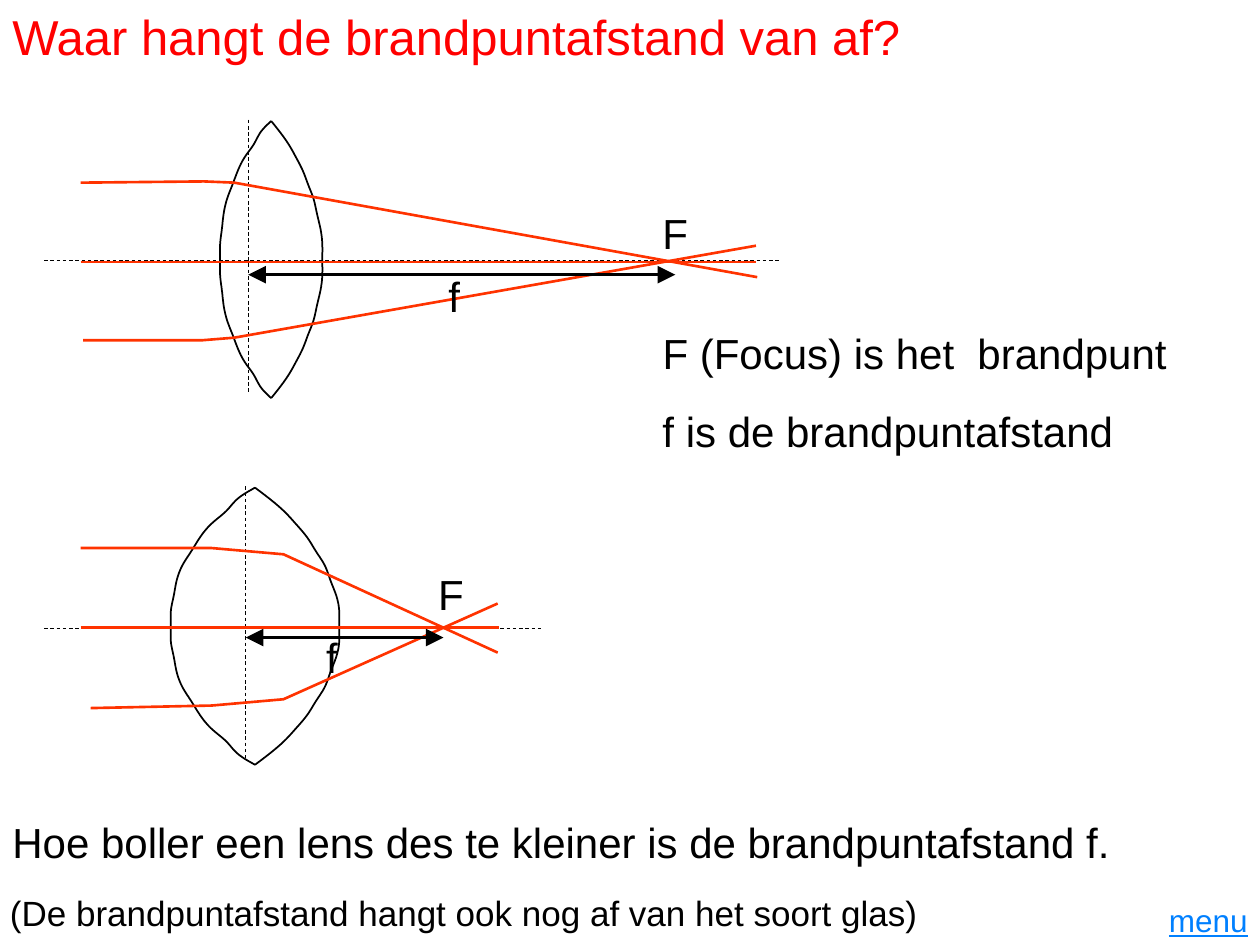
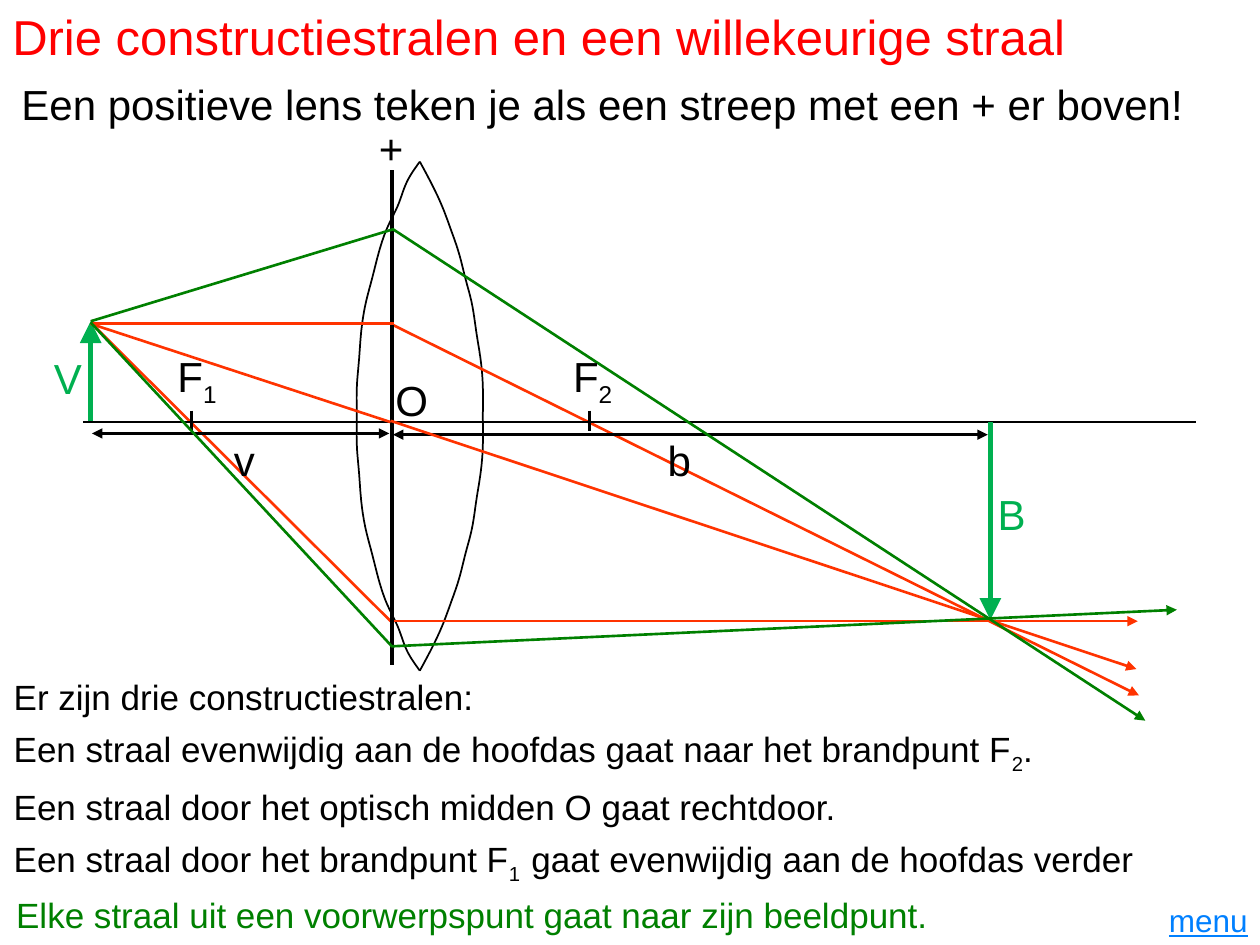
from dataclasses import dataclass

import lxml.etree
import pptx
import pptx.chart.data
import pptx.dml.color
import pptx.enum.chart
import pptx.enum.dml
import pptx.enum.shapes
import pptx.enum.text
import pptx.oxml.ns
import pptx.util

Inches = pptx.util.Inches
Pt = pptx.util.Pt
qn = pptx.oxml.ns.qn


@dataclass(frozen=True)
class Theme:
    font: str = "Arial"
    chart_font: str = "Times New Roman"
    black: str = "000000"
    title: str = "FF0000"
    ray: str = "FF3300"
    free_ray: str = "008000"
    arrow: str = "00B050"
    link: str = "0080FF"
    title_size: int = 28
    large: int = 24
    body: int = 20
    menu: int = 18
    chart_size: int = 10


THEME = Theme()

LENS_HEIGHTS = [100, 92, 83, 74, 64, 54, 44, 33, 22, 11, 0]
LENS_RIGHT = [0.71, 0.76, 0.81, 0.85, 0.89, 0.92, 0.95, 0.97, 0.99, 1, 1]
LENS_LEFT = [0.71, 0.65, 0.61, 0.56, 0.52, 0.49, 0.46, 0.44, 0.43, 0.42, 0.42]
LENS_PLOT = {"x": 0.082, "y": 0.199, "w": 0.842, "h": 0.644}
LENS_X_RANGE = (0.3, 1.1)
LENS_Y_RANGE = (-113, 113)

RAY = {"color": THEME.ray, "width": 1.5}
RAY_OUT = {**RAY, "tail": True}
FREE_RAY = {"color": THEME.free_ray, "width": 1.5, "tail": True}
GUIDE = {"color": THEME.black, "width": 0.5, "dash": True}
AXIS = {"color": THEME.black, "width": 1.5}
TICK = {"color": THEME.black, "width": 2}
LENS_LINE = {"color": THEME.black, "width": 2.5}
FOCAL_SPAN = {**TICK, "head": True, "tail": True}
DISTANCE = {**AXIS, "head": True, "tail": True}
OBJECT = {"color": THEME.arrow, "width": 2.5, "tail": True}

LARGE = {"size": THEME.large}
MIDDLE = {"size": THEME.large, "anchor": "MIDDLE"}
CENTERED = {**MIDDLE, "align": "CENTER"}
BODY = {"size": THEME.body, "anchor": "MIDDLE"}
GREEN = {"size": THEME.large, "color": THEME.arrow}
FREE_NOTE = {**BODY, "color": THEME.free_ray}
TITLE = {"size": THEME.title_size, "color": THEME.title, "anchor": "MIDDLE"}
MENU = {"size": THEME.menu, "color": THEME.link, "align": "RIGHT", "underline": True}
MENU_TEXT = ((8.98, 7.1, 1.02, 0.4), "menu", MENU)

RULES = [
    "Er zijn drie constructiestralen:",
    ["Een straal evenwijdig aan de hoofdas gaat naar het brandpunt F", ("2",), "."],
    "Een straal door het optisch midden O gaat rechtdoor.",
    ["Een straal door het brandpunt F", ("1  ",), "gaat evenwijdig aan de hoofdas verder"],
]
RULES_TOP, RULES_STEP = 5.31, 0.435

SLIDES = [
    {
        "title": "Waar hangt de brandpuntafstand van af?",
        "lenses": [(1.47, 0.05, 1.33, 3.86), (0.9, 2.96, 2.19, 3.86)],
        "lines": [
            ([(1.97, 0.95), (1.97, 3.11)], GUIDE),
            ([(0.35, 2.07), (6.18, 2.07)], GUIDE),
            ([(1.95, 3.86), (1.95, 6.02)], GUIDE),
            ([(0.35, 4.99), (4.29, 4.99)], GUIDE),
            ([(0.64, 4.98), (3.96, 4.98)], RAY),
            ([(0.72, 5.62), (1.68, 5.6), (2.25, 5.55), (3.95, 4.79)], RAY),
            ([(0.64, 4.35), (1.68, 4.35), (2.25, 4.4), (3.95, 5.18)], RAY),
            ([(0.64, 2.08), (6, 2.08)], RAY),
            ([(0.66, 2.7), (1.61, 2.7), (1.86, 2.68), (6, 1.95)], RAY),
            ([(0.64, 1.45), (1.62, 1.44), (1.86, 1.45), (6.01, 2.2)], RAY),
            ([(1.95, 5.06), (3.52, 5.06)], FOCAL_SPAN),
            ([(1.97, 2.18), (5.36, 2.18)], FOCAL_SPAN),
        ],
        "texts": [
            ((0, 6.43, 9.21, 0.5),
             "Hoe boller een lens des te kleiner is de brandpuntafstand f.", MIDDLE),
            ((2.49, 4.96, 0.47, 0.5), "f", LARGE),
            ((3.38, 4.46, 0.47, 0.5), "F", LARGE),
            ((5.16, 1.6, 0.47, 0.5), "F", LARGE),
            ((3.46, 2.1, 0.47, 0.5), "f", LARGE),
            ((5.16, 3.17, 3.97, 0.5), "f is de brandpuntafstand", LARGE),
            ((5.16, 2.55, 4.25, 0.5), "F (Focus) is het  brandpunt", LARGE),
            ((-0.02, 7.02, 9.21, 0.44),
             "(De brandpuntafstand hangt ook nog af van het soort glas)", BODY),
        ],
    },
    {
        "title": "Drie constructiestralen en een willekeurige straal",
        "lenses": [(2.49, -0.39, 1.64, 7.09)],
        "lines": [
            ([(0.72, 2.56), (3.1, 4.93)], RAY),
            ([(0.72, 3.34), (0.72, 2.55)], OBJECT),
            ([(3.1, 2.57), (9.04, 5.52)], RAY_OUT),
            ([(3.13, 4.93), (9.03, 4.93)], RAY_OUT),
            ([(0.66, 3.35), (9.49, 3.35)], AXIS),
            ([(3.11, 1.35), (3.11, 5.28)], LENS_LINE),
            ([(4.68, 3.26), (4.68, 3.42)], TICK),
            ([(1.52, 3.26), (1.52, 3.42)], TICK),
            ([(7.84, 3.45), (3.12, 3.45)], DISTANCE),
            ([(3.09, 3.44), (0.73, 3.44)], DISTANCE),
            ([(3.1, 3.34), (9.02, 5.31)], RAY_OUT),
            ([(7.86, 3.35), (7.86, 4.92)], OBJECT),
            ([(0.72, 2.57), (3.13, 2.57)], RAY),
            ([(0.72, 2.57), (3.1, 3.35)], RAY),
            ([(0.72, 2.55), (3.12, 1.82), (9.09, 5.72)], FREE_RAY),
            ([(0.72, 2.56), (3.11, 5.13), (9.34, 4.84)], FREE_RAY),
        ],
        "texts": [
            ((0, 0.57, 9.56, 0.5),
             "Een positieve lens teken je als een streep met een + er boven!", CENTERED),
            ((2.91, 0.92, 0.47, 0.56), "+", LARGE),
            ((1.31, 2.76, 0.58, 0.5), ["F", ("1",)], MIDDLE),
            ((4.45, 2.76, 0.58, 0.5), ["F", ("2",)], MIDDLE),
            ((5.2, 3.4, 0.58, 0.5), "b", MIDDLE),
            ((1.65, 3.4, 0.58, 0.5), "v", CENTERED),
            ((0.33, 2.75, 0.47, 0.5), "V", GREEN),
            ((7.82, 3.83, 0.47, 0.5), "B", GREEN),
            ((3.04, 2.92, 0.47, 0.5), "O", LARGE),
            *[((0.01, RULES_TOP + row * RULES_STEP, 9.95, 0.44), rule, BODY)
              for row, rule in enumerate(RULES)],
            ((0.03, 7.04, 9.9, 0.44),
             "Elke straal uit een voorwerpspunt gaat naar zijn beeldpunt.", FREE_NOTE),
        ],
    },
]


def rgb(value):
    return pptx.dml.color.RGBColor.from_string(value)


def apply(target, values):
    for name, value in values.items():
        setattr(target, name, value)


def add_text(page, place, content, style):
    box = page.shapes.add_textbox(*map(Inches, place))
    apply(box.text_frame, {
        "word_wrap": True,
        "vertical_anchor": pptx.enum.text.MSO_ANCHOR[style.get("anchor", "TOP")],
    })
    para = box.text_frame.paragraphs[0]
    para.alignment = pptx.enum.text.PP_ALIGN[style.get("align", "LEFT")]
    for part in [content] if isinstance(content, str) else content:
        span = para.add_run()
        subscript = isinstance(part, tuple)
        span.text = part[0] if subscript else part
        apply(span.font, {"name": THEME.font, "size": Pt(style["size"]),
                          "underline": style.get("underline")})
        span.font.color.rgb = rgb(style.get("color", THEME.black))
        if subscript:
            span._r.get_or_add_rPr().set("baseline", "-25000")


def add_line(page, points, style):
    corners = [(Inches(x), Inches(y)) for x, y in points]
    if len(corners) == 2:
        line = page.shapes.add_connector(
            pptx.enum.shapes.MSO_CONNECTOR.STRAIGHT, *corners[0], *corners[1])
    else:
        builder = page.shapes.build_freeform(*corners[0], scale=1.0)
        builder.add_line_segments(corners[1:], close=False)
        line = builder.convert_to_shape()
        line.fill.background()
    line.line.color.rgb = rgb(style["color"])
    line.line.width = Pt(style["width"])
    if style.get("dash"):
        line.line.dash_style = pptx.enum.dml.MSO_LINE.DASH
    properties = line.element.spPr
    outline = properties.find(qn("a:ln"))
    size = "lg" if style["width"] >= 2 else "med"
    for end in ("head", "tail"):
        if style.get(end):
            lxml.etree.SubElement(outline, qn(f"a:{end}End"),
                                  {"type": "triangle", "w": size, "len": size})
    lxml.etree.SubElement(properties, qn("a:effectLst"))


def clear_background():
    properties = lxml.etree.Element(qn("c:spPr"))
    lxml.etree.SubElement(properties, qn("a:noFill"))
    outline = lxml.etree.SubElement(properties, qn("a:ln"))
    lxml.etree.SubElement(outline, qn("a:noFill"))
    return properties


def set_plot_layout(area):
    for old in area.findall(qn("c:layout")):
        area.remove(old)
    layout = lxml.etree.Element(qn("c:layout"))
    manual = lxml.etree.SubElement(layout, qn("c:manualLayout"))
    values = {"layoutTarget": "inner", "xMode": "edge", "yMode": "edge", **LENS_PLOT}
    for name, value in values.items():
        lxml.etree.SubElement(manual, qn(f"c:{name}"), val=str(value))
    area.insert(0, layout)
    area.append(clear_background())


def add_lens(page, place):
    data = pptx.chart.data.XyChartData()
    heights = LENS_HEIGHTS + [-height for height in LENS_HEIGHTS[-2::-1]]
    for number, half in enumerate((LENS_RIGHT, LENS_LEFT), 1):
        series = data.add_series(f"Series {number}")
        for x, y in zip(half + half[-2::-1], heights):
            series.add_data_point(x, y)
    chart = page.shapes.add_chart(
        pptx.enum.chart.XL_CHART_TYPE.XY_SCATTER_SMOOTH_NO_MARKERS,
        *map(Inches, place), data).chart
    apply(chart, {"has_legend": False, "has_title": False})
    apply(chart.font, {"name": THEME.chart_font, "size": Pt(THEME.chart_size)})
    chart.font.color.rgb = rgb(THEME.black)
    axes = ((chart.category_axis, LENS_X_RANGE), (chart.value_axis, LENS_Y_RANGE))
    for axis, (low, high) in axes:
        apply(axis, {"minimum_scale": low, "maximum_scale": high,
                     "has_major_gridlines": False, "visible": False})
    plot = chart.plots[0]
    plot.vary_by_categories = False
    for series in plot.series:
        series.format.line.color.rgb = rgb(THEME.black)
        series.format.line.width = Pt(1)
    for smooth in chart.element.iter(qn("c:smooth")):
        smooth.set("val", "1")
    frame = chart.element.find(qn("c:chart"))
    set_plot_layout(frame.find(qn("c:plotArea")))
    frame.addnext(clear_background())


def main():
    deck = pptx.Presentation()
    apply(deck, {"slide_width": Inches(10), "slide_height": Inches(7.5)})
    for content in SLIDES:
        page = deck.slides.add_slide(deck.slide_layouts[6])
        for place in content["lenses"]:
            add_lens(page, place)
        for points, style in content["lines"]:
            add_line(page, points, style)
        title = ((0, 0, 10, 0.57), content["title"], TITLE)
        for place, text, style in [title, *content["texts"], MENU_TEXT]:
            add_text(page, place, text, style)
    deck.save("out.pptx")


if __name__ == "__main__":
    main()
